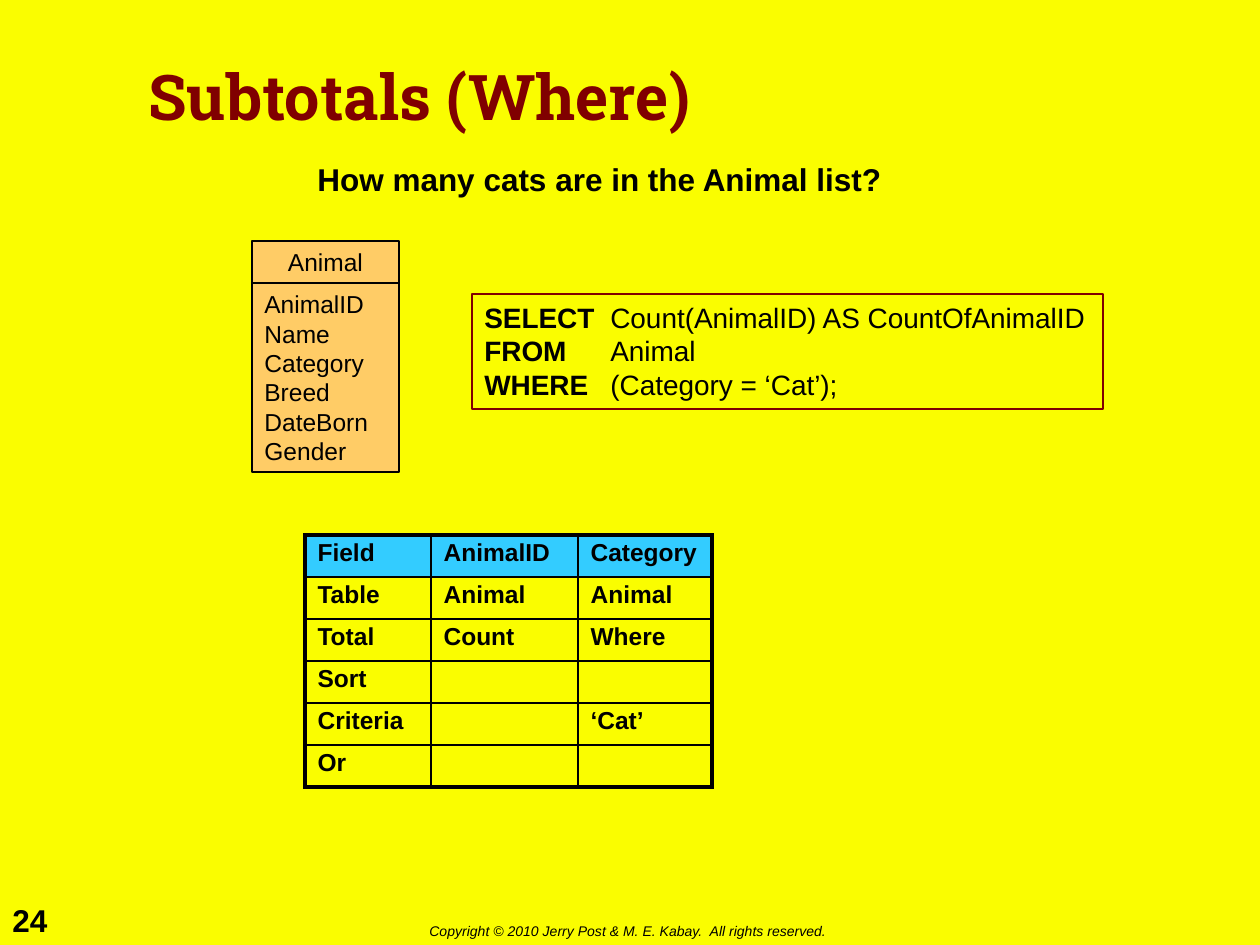
from lxml import etree
from pptx import Presentation, util as u
from pptx.dml.color import RGBColor
from pptx.enum import shapes, text
from pptx.oxml import ns

YELLOW = RGBColor(0xFA, 0xFD, 0x00)
MAROON = RGBColor(0x80, 0x00, 0x00)
BLACK = RGBColor(0x00, 0x00, 0x00)
ORANGE = RGBColor(0xFF, 0xCC, 0x66)
SKY = RGBColor(0x33, 0xCC, 0xFF)

TITLE = "Subtotals (Where)"
QUESTION = "How many cats are in the Animal list?"
PAGE_NUMBER = "24"
COPYRIGHT = "Copyright © 2010 Jerry Post & M. E. Kabay.  All rights reserved."
ENTITY = "Animal"
FIELDS = ["AnimalID", "Name", "Category", "Breed", "DateBorn", "Gender"]
QUERY = [
    ("SELECT", "Count(AnimalID) AS CountOfAnimalID"),
    ("FROM", "Animal"),
    ("WHERE", "(Category = ‘Cat’);"),
]
GRID = [
    ("Field", "AnimalID", "Category"),
    ("Table", "Animal", "Animal"),
    ("Total", "Count", "Where"),
    ("Sort", "", ""),
    ("Criteria", "", "‘Cat’"),
    ("Or", "", ""),
]
COLUMN_WIDTHS = [126, 147, 134]
ROW_HEIGHT = 42
THIN, THICK = 1, 2.25


def px(*lengths):
    return [u.Inches(length / 126) for length in lengths]


def style(span, size, bold=False, italic=False, color=BLACK, name="Arial"):
    font = span.font
    font.size, font.bold, font.italic, font.name = u.Pt(size), bold, italic, name
    font.color.rgb = color


def write(box, lines, size, anchor=text.MSO_ANCHOR.TOP, align=text.PP_ALIGN.LEFT,
          spacing=None, **look):
    frame = box.text_frame
    frame.word_wrap = True
    frame.vertical_anchor = anchor
    frame.text = "\n".join(lines)
    for para in frame.paragraphs:
        para.alignment = align
        para.line_spacing = spacing
        for span in para.runs:
            style(span, size, **look)


def add_text(page, place, line, size, **look):
    write(page.shapes.add_textbox(*px(*place)), [line], size, **look)


def add_rect(parent, place, line_color, fill=None):
    box = parent.shapes.add_shape(shapes.MSO_SHAPE.RECTANGLE, *px(*place))
    box.shadow.inherit = False
    if fill is None:
        box.fill.background()
    else:
        box.fill.solid()
        box.fill.fore_color.rgb = fill
    box.line.color.rgb = line_color
    box.line.width = u.Pt(1)
    return box


def add_entity(page):
    group = page.shapes.add_group_shape()
    body = add_rect(group, (252, 283, 147, 189), BLACK, ORANGE)
    write(body, FIELDS, 14)
    header = add_rect(group, (252, 241, 147, 42), BLACK, ORANGE)
    write(header, [ENTITY], 14, anchor=text.MSO_ANCHOR.MIDDLE,
          align=text.PP_ALIGN.CENTER)


def add_query(page):
    box = add_rect(page, (472, 294, 631, 115), MAROON)
    write(box, ["\t".join(clause) for clause in QUERY], 16)
    for para, (keyword, rest) in zip(box.text_frame.paragraphs, QUERY):
        para.text = keyword
        style(para.runs[0], 16, bold=True)
        span = para.add_run()
        span.text = "\t" + rest
        style(span, 16)


def set_border(cell, side, width):
    props = cell._tc.get_or_add_tcPr()
    line = etree.SubElement(props, ns.qn("a:ln" + side), w=str(u.Pt(width)))
    fill = etree.SubElement(line, ns.qn("a:solidFill"))
    etree.SubElement(fill, ns.qn("a:srgbClr"), val=str(BLACK))


def add_grid(page):
    rows, cols = len(GRID), len(COLUMN_WIDTHS)
    size = sum(COLUMN_WIDTHS), rows * ROW_HEIGHT
    table = page.shapes.add_table(rows, cols, *px(305, 535, *size)).table
    table.first_row = table.horz_banding = False
    for column, width in zip(table.columns, px(*COLUMN_WIDTHS)):
        column.width = width
    for r, row in enumerate(GRID):
        table.rows[r].height = px(ROW_HEIGHT)[0]
        for c, label in enumerate(row):
            cell = table.cell(r, c)
            outer = {"L": c == 0, "R": c == cols - 1, "T": r == 0, "B": r == rows - 1}
            for side, is_outer in outer.items():
                set_border(cell, side, THICK if is_outer else THIN)
            if r == 0:
                cell.fill.solid()
                cell.fill.fore_color.rgb = SKY
            else:
                cell.fill.background()
            para = cell.text_frame.paragraphs[0]
            para.line_spacing = 0.9
            if label:
                para.text = label
                style(para.runs[0], 14, bold=True)
            else:  # keeps an empty cell from growing its row
                etree.SubElement(para._p, ns.qn("a:endParaRPr"), sz="1400")


def main():
    deck = Presentation()
    deck.slide_width, deck.slide_height = px(1260, 945)
    page = deck.slides.add_slide(deck.slide_layouts[6])
    page.background.fill.solid()
    page.background.fill.fore_color.rgb = YELLOW

    add_text(page, (0, 895, 63, 50), PAGE_NUMBER, 18, bold=True)
    add_text(page, (417, 916, 436, 30), COPYRIGHT, 8, italic=True)
    add_text(page, (136, 21, 987, 158), TITLE, 36, anchor=text.MSO_ANCHOR.MIDDLE,
             spacing=0.9, bold=True, color=MAROON, name="Roboto Slab")
    add_text(page, (305, 158, 714, 53), QUESTION, 18, spacing=0.9, bold=True)
    add_query(page)
    add_entity(page)
    add_grid(page)
    deck.save("out.pptx")


if __name__ == "__main__":
    main()
